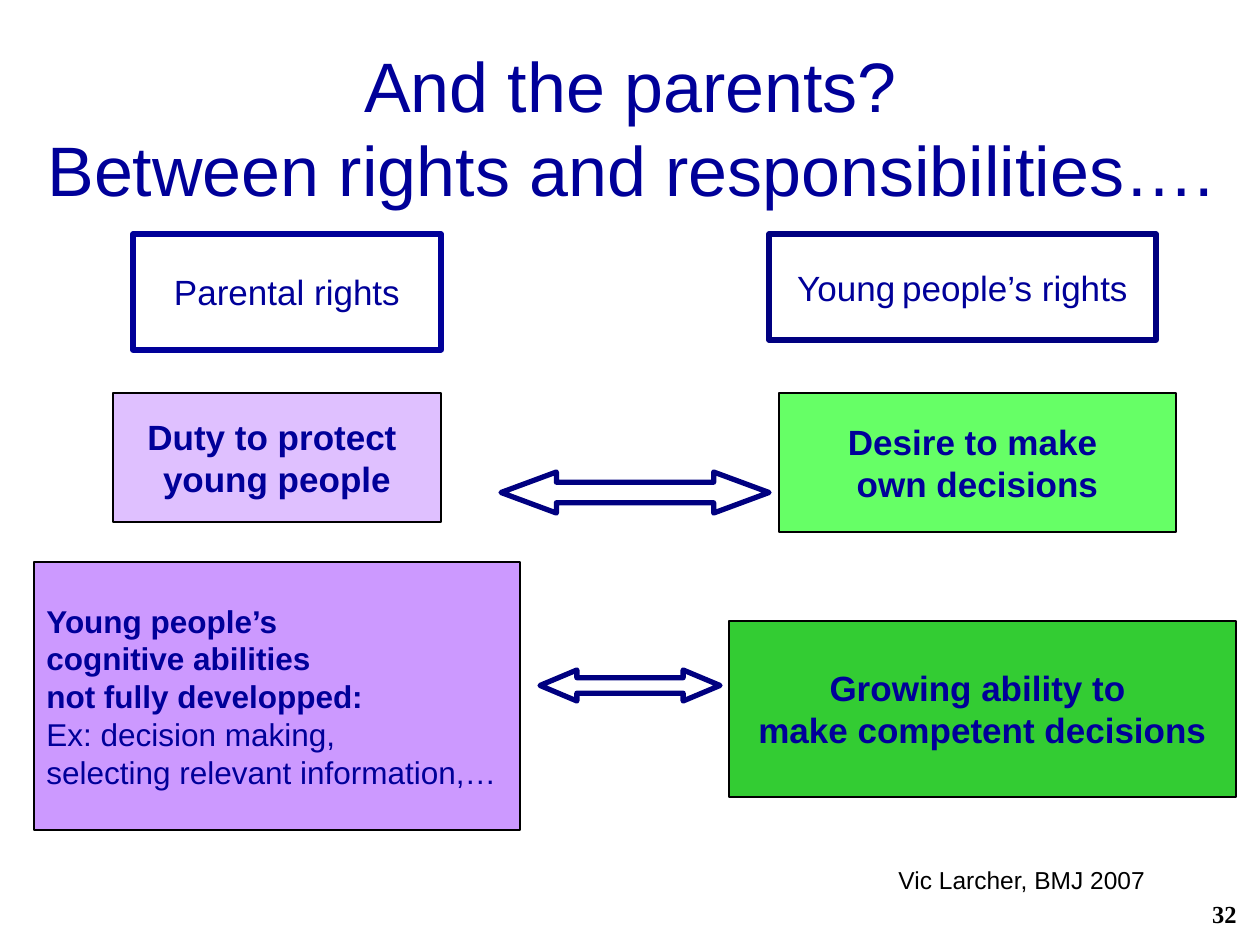
from lxml import etree
from pptx import Presentation, util as u
from pptx.dml.color import RGBColor
from pptx.enum import shapes, text
from pptx.oxml.ns import qn

NAVY = RGBColor(0x00, 0x00, 0x99)
DARK = RGBColor(0x00, 0x00, 0x80)
BLACK = RGBColor(0x00, 0x00, 0x00)
LILAC = RGBColor(0xCC, 0x99, 0xFF)
GREEN = RGBColor(0x33, 0xCC, 0x33)
LIME = RGBColor(0x66, 0xFF, 0x66)
PX = 914400 / 126
LEFT, MID, RIGHT = text.PP_ALIGN.LEFT, text.PP_ALIGN.CENTER, text.PP_ALIGN.RIGHT


def emu(*px):
    return [u.Emu(round(n * PX)) for n in px]


class Board:
    def __init__(self, deck):
        self.slide = deck.slides.add_slide(deck.slide_layouts[5])

    def style(self, par, size, color=NAVY, bold=False, align=MID, face="Arial"):
        par.alignment = align
        font = par.font
        font.name, font.size, font.bold = face, u.Pt(size), bold
        font.color.rgb = color

    def title(self, at, words):
        head = self.slide.shapes.title
        head.left, head.top, head.width, head.height = emu(*at)
        frame = head.text_frame
        frame.text = words
        frame.auto_size = text.MSO_AUTO_SIZE.NONE
        frame.vertical_anchor = text.MSO_ANCHOR.MIDDLE
        self.style(frame.paragraphs[0], 40)

    def shape(self, kind, at, fill, line, width):
        item = self.slide.shapes.add_shape(kind, *emu(*at))
        item.shadow.inherit = False
        if fill is None:
            item.fill.background()
        else:
            item.fill.solid()
            item.fill.fore_color.rgb = fill
        item.line.color.rgb = line
        item.line.width = u.Pt(width)
        return item

    def box(self, at, pars, fill=None, line=BLACK, width=1, size=20, align=MID, alpha=None):
        """Draw a rectangle; pars holds (words, bold) pairs, one per paragraph."""
        item = self.shape(shapes.MSO_SHAPE.RECTANGLE, at, fill, line, width)
        if alpha:
            color = item.fill._xPr.find(qn("a:solidFill"))[0]
            etree.SubElement(color, qn("a:alpha"), val=str(alpha * 1000))
        frame = item.text_frame
        frame.word_wrap = False
        frame.vertical_anchor = text.MSO_ANCHOR.MIDDLE
        frame.text = "\n".join(words for words, _ in pars)
        for par, (_, bold) in zip(frame.paragraphs, pars):
            self.style(par, size, bold=bold, align=align)
        return item

    def arrow(self, at, tip):
        item = self.shape(shapes.MSO_SHAPE.LEFT_RIGHT_ARROW, at, None, DARK, 3)
        item.adjustments[1] = tip

    def label(self, at, words, anchor=text.MSO_ANCHOR.TOP, **look):
        frame = self.slide.shapes.add_textbox(*emu(*at)).text_frame
        frame.word_wrap = False
        frame.vertical_anchor = anchor
        frame.text = words
        self.style(frame.paragraphs[0], 14, BLACK, **look)


def main():
    deck = Presentation()
    deck.slide_width, deck.slide_height = emu(1260, 945)
    board = Board(deck)
    board.title((32, 32, 1197, 189), "And the parents?\vBetween rights and responsibilities….")
    board.label((987, 882, 262, 63), "32", text.MSO_ANCHOR.MIDDLE,
                bold=True, align=RIGHT, face="Times New Roman")

    board.box((113, 393, 328, 129), [("Duty to protect \vyoung people", True)], LILAC, alpha=61)
    board.box((34, 562, 486, 268), [
        ("Young people’s\vcognitive abilities \vnot fully developped:", True),
        ("Ex: decision making, \vselecting relevant information,…", False),
    ], LILAC, size=18, align=LEFT)
    board.box((133, 234, 308, 116), [("Parental rights", False)], line=NAVY, width=3)
    young = board.box((769, 234, 387, 106), [("Young", False)], line=DARK, width=3)
    par = young.text_frame.paragraphs[0]
    gap = par.add_run()
    gap.text = " "
    gap.font.size = u.Pt(14)
    par.add_run().text = "people’s rights"
    board.box((729, 621, 507, 176), [("Growing ability to \vmake competent decisions", True)], GREEN)
    board.box((779, 393, 397, 139), [("Desire to make \vown decisions", True)], LIME)

    board.label((886, 859, 272, 42), "Vic Larcher, BMJ 2007", align=LEFT)
    board.arrow((540, 670, 180, 31), 1.19)
    board.arrow((501, 472, 268, 41), 1.35)
    deck.save("out.pptx")


if __name__ == "__main__":
    main()
